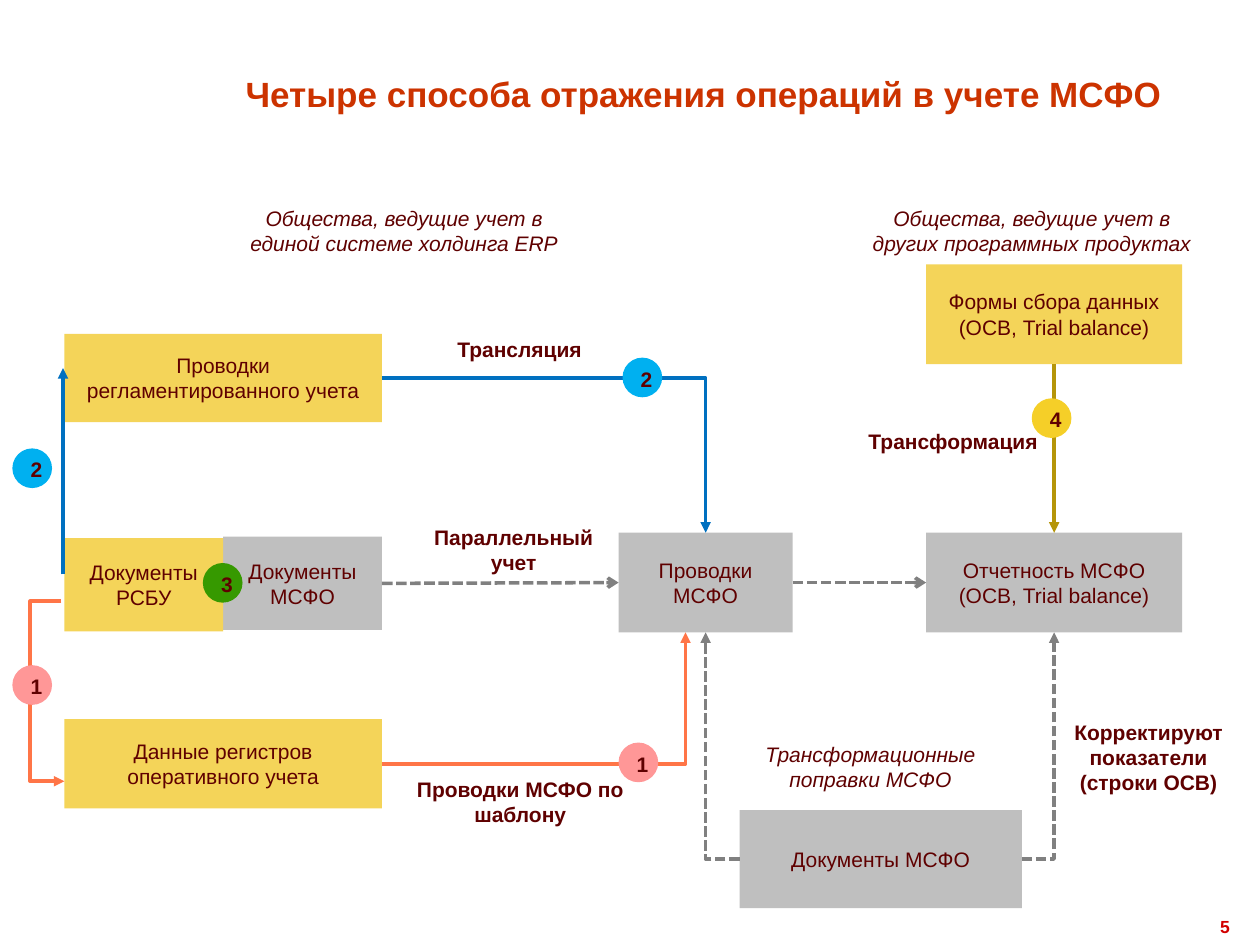
from lxml import etree
from pptx import Presentation
from pptx.dml.color import RGBColor
from pptx.enum.dml import MSO_LINE
from pptx.enum.shapes import MSO_CONNECTOR, MSO_SHAPE
from pptx.enum.text import MSO_ANCHOR, PP_ALIGN
from pptx.oxml.ns import qn
from pptx.util import Cm, Pt

RECTANGLE, OVAL = MSO_SHAPE.RECTANGLE, MSO_SHAPE.OVAL
STRAIGHT, ELBOW = MSO_CONNECTOR.STRAIGHT, MSO_CONNECTOR.ELBOW
LEFT, CENTER, RIGHT = PP_ALIGN.LEFT, PP_ALIGN.CENTER, PP_ALIGN.RIGHT
TOP, MIDDLE = MSO_ANCHOR.TOP, MSO_ANCHOR.MIDDLE
DASH = MSO_LINE.SQUARE_DOT
SIDE_TOP, SIDE_LEFT, SIDE_BOTTOM, SIDE_RIGHT = range(4)

TEXT, YELLOW, GRAY = "5F0000", "F4D459", "BFBFBF"
BLUE, ORANGE, OLIVE, DARK_GRAY = "0070C0", "FF7547", "B59509", "808080"
rgb = RGBColor.from_string


def write(shape, text, size=12, color=TEXT, bold=False, italic=False,
          align=CENTER, anchor=MIDDLE, spacing=None):
    frame = shape.text_frame
    frame.word_wrap = True
    frame.vertical_anchor = anchor
    frame.text = text
    for paragraph in frame.paragraphs:
        paragraph.alignment = align
        paragraph.line_spacing = spacing
        font = paragraph.font
        font.name, font.size = "Arial", Pt(size)
        font.bold, font.italic = bold, italic
        font.color.rgb = rgb(color)


def style_arrow(arrow, color, head="triangle", dashed=False):
    arrow.line.color.rgb = rgb(color)
    arrow.line.width = Pt(2)
    if dashed:
        arrow.line.dash_style = DASH
    etree.SubElement(arrow.line._get_or_add_ln(), qn("a:tailEnd"), type=head)
    properties = arrow._element.spPr
    if properties.find(qn("a:effectLst")) is None:
        etree.SubElement(properties, qn("a:effectLst"))


prs = Presentation()
prs.slide_width, prs.slide_height = Cm(25.4), Cm(19.05)
slide = prs.slides.add_slide(prs.slide_layouts[6])
shapes = slide.shapes

# Title and page number
title = shapes.add_textbox(Cm(4.7), Cm(0.43), Cm(19.13), Cm(3))
write(title, "Четыре способа отражения операций в учете МСФО", size=20,
      color="CC3300", bold=True, align=LEFT, spacing=0.9)
page_number = shapes.add_textbox(Cm(22.91), Cm(18.34), Cm(2.13), Cm(0.71))
write(page_number, "5", size=10, color="D20000", bold=True, align=RIGHT, anchor=TOP)

# Data boxes
boxes = {}
for key, text, color, x, y, w, h in [
    ("ifrs_docs", "Документы МСФО", GRAY, 4.5, 10.82, 3.2, 1.88),
    ("ras_docs", "Документы РСБУ", YELLOW, 1.3, 10.85, 3.2, 1.88),
    ("forms", "Формы сбора данных\n(ОСВ, Trial balance)", YELLOW, 18.67, 5.33, 5.16, 2.01),
    ("ifrs_entries", "Проводки МСФО", GRAY, 12.47, 10.74, 3.51, 2.01),
    ("report", "Отчетность МСФО\n(ОСВ, Trial balance)", GRAY, 18.67, 10.74, 5.16, 2.01),
    ("ras_entries", "Проводки регламентированного учета", YELLOW, 1.3, 6.73, 6.4, 1.78),
    ("registers", "Данные регистров оперативного учета", YELLOW, 1.3, 14.5, 6.4, 1.8),
    ("adjustments", "Документы МСФО", GRAY, 14.91, 16.33, 5.69, 1.98),
]:
    box = shapes.add_shape(RECTANGLE, Cm(x), Cm(y), Cm(w), Cm(h))
    box.shadow.inherit = False
    box.fill.solid()
    box.fill.fore_color.rgb = rgb(color)
    box.line.fill.background()
    write(box, text)
    boxes[key] = box

# Arrows joined to boxes
for kind, start, start_side, end, end_side, color, head, dashed in [
    (STRAIGHT, "ifrs_docs", SIDE_RIGHT, "ifrs_entries", SIDE_LEFT, DARK_GRAY, "arrow", True),
    (STRAIGHT, "ifrs_entries", SIDE_RIGHT, "report", SIDE_LEFT, DARK_GRAY, "arrow", True),
    (STRAIGHT, "forms", SIDE_BOTTOM, "report", SIDE_TOP, OLIVE, "triangle", False),
    (ELBOW, "ras_entries", SIDE_RIGHT, "ifrs_entries", SIDE_TOP, BLUE, "triangle", False),
    (ELBOW, "adjustments", SIDE_LEFT, "ifrs_entries", SIDE_BOTTOM, DARK_GRAY, "triangle", True),
    (ELBOW, "adjustments", SIDE_RIGHT, "report", SIDE_BOTTOM, DARK_GRAY, "triangle", True),
]:
    arrow = shapes.add_connector(kind, 0, 0, 0, 0)
    arrow.begin_connect(boxes[start], start_side)
    arrow.end_connect(boxes[end], end_side)
    if kind == ELBOW:  # a single bend
        arrow._element.spPr.find(qn("a:prstGeom")).set("prst", "bentConnector2")
    style_arrow(arrow, color, head, dashed)

# Arrow from the documents up to the entries
ras_arrow = shapes.add_connector(STRAIGHT, Cm(1.27), Cm(11.58), Cm(1.27), Cm(7.42))
style_arrow(ras_arrow, BLUE)

# Free-standing bent arrows of the template method
for route in [
    [(1.24, 12.12), (0.61, 12.12), (0.61, 15.75), (1.3, 15.75)],
    [(7.7, 15.4), (13.82, 15.4), (13.82, 12.75)],
]:
    start, *bends = [(Cm(x), Cm(y)) for x, y in route]
    builder = shapes.build_freeform(*start)
    builder.add_line_segments(bends, close=False)
    template_arrow = builder.convert_to_shape()
    template_arrow.shadow.inherit = False
    template_arrow.fill.background()
    style_arrow(template_arrow, ORANGE)

# Labels: bold for methods, italic for explanations
for text, bold, x, y, w, h in [
    ("Параллельный учет", True, 8.31, 10.44, 4.09, 1.3),
    ("Трансляция", True, 8.43, 6.65, 4.09, 0.76),
    ("Трансформация", True, 17.17, 8.51, 4.09, 0.76),
    ("Проводки МСФО по шаблону", True, 7.9, 15.52, 5.18, 1.27),
    ("Корректируют показатели (строки ОСВ)", True, 21.11, 14.38, 4.09, 1.8),
    ("Трансформационные поправки МСФО", False, 15.06, 14.83, 4.98, 1.27),
    ("Общества, ведущие учет в других программных продуктах", False, 17.3, 4.01, 7.01, 1.3),
    ("Общества, ведущие учет в\nединой системе холдинга ERP", False, 4.39, 4.01, 7.52, 1.3),
]:
    label = shapes.add_textbox(Cm(x), Cm(y), Cm(w), Cm(h))
    write(label, text, bold=bold, italic=not bold, anchor=TOP)

# Numbered method markers
marker_colors = {"1": "FF9797", "2": "00B0F0", "3": "369900", "4": "F5CF28"}
for number, x, y in [
    ("1", 0.25, 13.41), ("1", 12.47, 14.97), ("2", 12.55, 7.21),
    ("2", 0.25, 9.04), ("3", 4.09, 11.35), ("4", 20.8, 8.03),
]:
    marker = shapes.add_shape(OVAL, Cm(x), Cm(y), Cm(0.8), Cm(0.8))
    marker.shadow.inherit = False
    marker.fill.solid()
    marker.fill.fore_color.rgb = rgb(marker_colors[number])
    marker.line.fill.background()
    write(marker, number, bold=True, align=LEFT, spacing=1.1)

prs.save("out.pptx")
